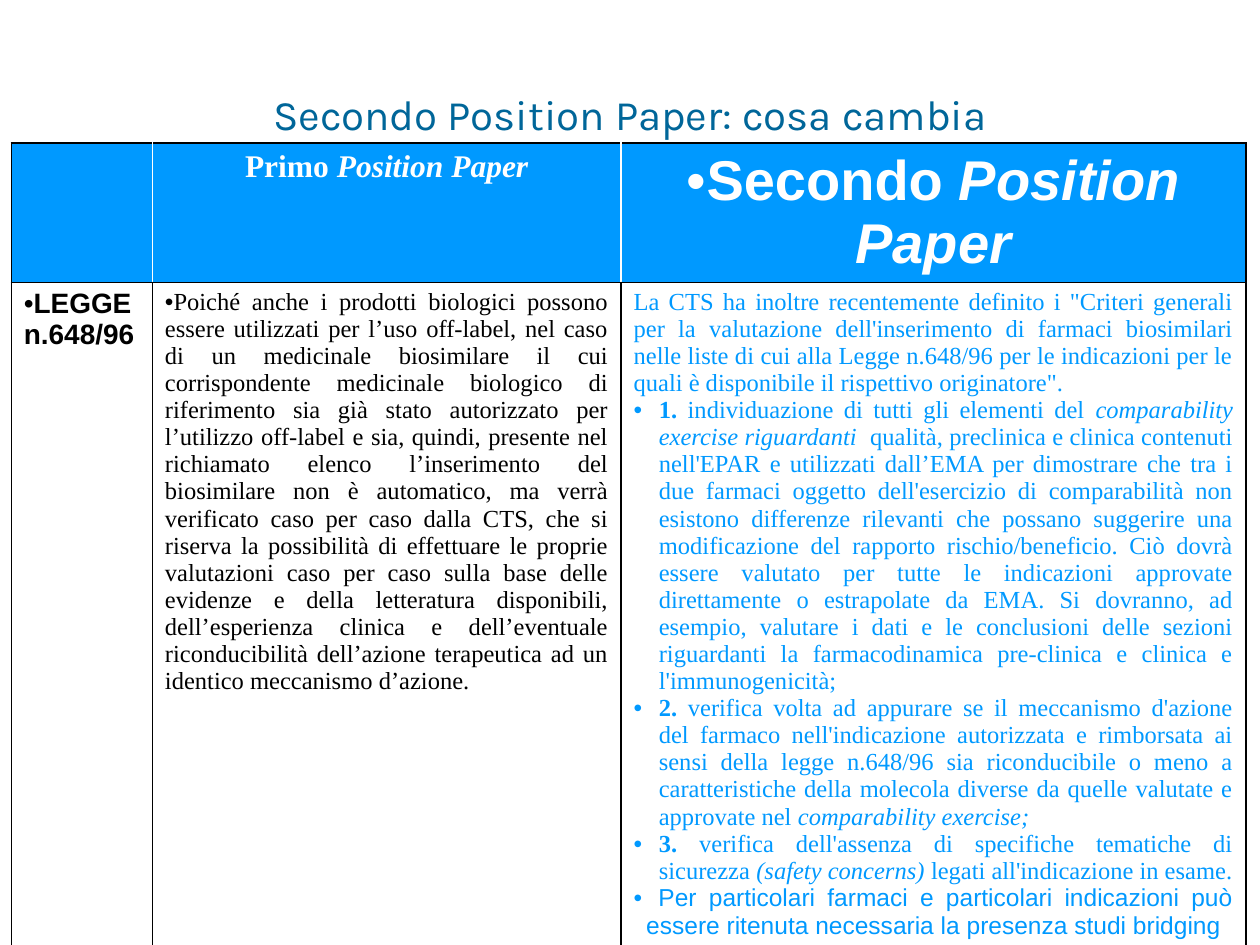
from dataclasses import dataclass

from lxml import etree
from pptx import Presentation
from pptx.dml.color import RGBColor
from pptx.enum.text import MSO_ANCHOR, PP_ALIGN
from pptx.oxml.ns import qn
from pptx.util import Pt

LEFT, CENTER, JUSTIFY = PP_ALIGN.LEFT, PP_ALIGN.CENTER, PP_ALIGN.JUSTIFY
TOP = MSO_ANCHOR.TOP


@dataclass(frozen=True)
class Theme:
    """Colours, fonts and type sizes of the slide."""
    blue: str = "0099FF"
    title_blue: str = "006699"
    black: str = "000000"
    white: str = "FFFFFF"
    title_font: str = "Karla"
    sans: str = "Arial"
    serif: str = "Times New Roman"
    title_size: float = 24
    first_head_size: float = 18
    second_head_size: float = 32
    label_size: float = 16
    body_size: float = 14
    border: float = 1


@dataclass(frozen=True)
class Style:
    """Look of one paragraph."""
    font: str
    size: float
    color: str
    align: int = LEFT
    bullet: bool = False
    indent: float = 0


THEME = Theme()
TITLE = Style(THEME.title_font, THEME.title_size, THEME.title_blue, CENTER)
FIRST_HEAD = Style(THEME.serif, THEME.first_head_size, THEME.white, CENTER)
SECOND_HEAD = Style(THEME.sans, THEME.second_head_size, THEME.white, CENTER, True)
LABEL = Style(THEME.sans, THEME.label_size, THEME.black, LEFT, True)
FIRST_BODY = Style(THEME.serif, THEME.body_size, THEME.black, JUSTIFY, True)
INTRO = Style(THEME.serif, THEME.body_size, THEME.blue, JUSTIFY)
CRITERION = Style(THEME.serif, THEME.body_size, THEME.blue, JUSTIFY, True, 14.4)
CLOSING = Style(THEME.sans, THEME.body_size, THEME.blue, JUSTIFY, True, 7.2)

HEADER = [
    [],
    [(FIRST_HEAD, [("Primo ", "b"), ("Position Paper", "bi")])],
    [(SECOND_HEAD, [("Secondo ", "b"), ("Position Paper", "bi")])],
]
BODY = [
    [(LABEL, [("LEGGE n.648/96", "b")])],
    [(FIRST_BODY, [(
        "Poiché anche i prodotti biologici possono essere utilizzati per l’uso off-label, "
        "nel caso di un medicinale biosimilare il cui corrispondente medicinale biologico "
        "di riferimento sia già stato autorizzato per l’utilizzo off-label e sia, quindi, "
        "presente nel richiamato elenco l’inserimento del biosimilare non è automatico, ma "
        "verrà verificato caso per caso dalla CTS, che si riserva la possibilità di "
        "effettuare le proprie valutazioni caso per caso sulla base delle evidenze e della "
        "letteratura disponibili, dell’esperienza clinica e dell’eventuale riconducibilità "
        "dell’azione terapeutica ad un identico meccanismo d’azione. ", "")])],
    [
        (INTRO, [(
            "La CTS ha inoltre recentemente definito i \"Criteri generali per la valutazione "
            "dell'inserimento di farmaci biosimilari nelle liste di cui alla Legge n.648/96 "
            "per le indicazioni per le quali è disponibile il rispettivo originatore\".", "")]),
        (CRITERION, [
            ("1. ", "b"),
            ("individuazione di tutti gli elementi del ", ""),
            ("comparability exercise riguardanti  ", "i"),
            ("qualità, preclinica e clinica contenuti nell'EPAR e utilizzati dall’EMA per "
             "dimostrare che tra i due farmaci oggetto dell'esercizio di comparabilità non "
             "esistono differenze rilevanti che possano suggerire una modificazione del "
             "rapporto rischio/beneficio. Ciò dovrà essere valutato per tutte le indicazioni "
             "approvate direttamente o estrapolate da EMA. Si dovranno, ad esempio, valutare "
             "i dati e le conclusioni delle sezioni riguardanti la farmacodinamica "
             "pre-clinica e clinica e l'immunogenicità;", "")]),
        (CRITERION, [
            ("2. ", "b"),
            ("verifica volta ad appurare se il meccanismo d'azione del farmaco "
             "nell'indicazione autorizzata e rimborsata ai sensi della legge n.648/96 sia "
             "riconducibile o meno a caratteristiche della molecola diverse da quelle "
             "valutate e approvate nel ", ""),
            ("comparability exercise;", "i")]),
        (CRITERION, [
            ("3. ", "b"),
            ("verifica dell'assenza di specifiche tematiche di sicurezza ", ""),
            ("(safety concerns) ", "i"),
            ("legati all'indicazione in esame.", "")]),
        (CLOSING, [(
            " Per particolari farmaci e particolari indicazioni può essere ritenuta "
            "necessaria la presenza studi bridging", "")]),
    ],
]


def write_paragraph(para, style, spans):
    """Format one paragraph and add its runs."""
    para.alignment = style.align
    para.space_before = Pt(0)
    properties = para._p.get_or_add_pPr()
    properties.set("marL", str(Pt(style.indent)))
    properties.set("indent", str(Pt(-style.indent)))
    if style.bullet:
        etree.SubElement(properties, qn("a:buFont"), typeface=THEME.sans)
        etree.SubElement(properties, qn("a:buChar"), char="•")
    else:
        etree.SubElement(properties, qn("a:buNone"))
    for text, marks in spans:
        span = para.add_run()
        span.text = text
        font = span.font
        font.name, font.size = style.font, Pt(style.size)
        font.bold, font.italic = "b" in marks, "i" in marks
        font.color.rgb = RGBColor.from_string(style.color)


def write_frame(frame, paragraphs):
    """Fill a text frame with styled paragraphs."""
    for index, (style, spans) in enumerate(paragraphs):
        para = frame.add_paragraph() if index else frame.paragraphs[0]
        write_paragraph(para, style, spans)


def set_borders(cell, colors):
    """Draw the left, right, top and bottom borders of a cell."""
    properties = cell._tc.get_or_add_tcPr()
    for index, (side, color) in enumerate(zip("LRTB", colors)):
        line = etree.Element(qn(f"a:ln{side}"), w=str(Pt(THEME.border)))
        fill = etree.SubElement(line, qn("a:solidFill"))
        etree.SubElement(fill, qn("a:srgbClr"), val=color)
        properties.insert(index, line)


def add_title(page, box):
    """Place the slide title in the given box."""
    title = page.shapes.title
    title.left, title.top, title.width, title.height = map(Pt, box)
    frame = title.text_frame
    frame.word_wrap = True
    frame.vertical_anchor = TOP
    write_frame(frame, [(TITLE, [("Secondo Position Paper: cosa cambia", "")])])


def add_comparison(page, box, widths, heights):
    """Place the table that compares the two papers."""
    rows = [HEADER, BODY]
    table = page.shapes.add_table(len(rows), len(widths), *map(Pt, box)).table
    table.first_row = table.horz_banding = False
    for column, width in zip(table.columns, widths):
        column.width = Pt(width)
    for row, height in zip(table.rows, heights):
        row.height = Pt(height)
    last = len(widths) - 1
    for r, contents in enumerate(rows):
        inner = THEME.black if r else THEME.white
        for c, paragraphs in enumerate(contents):
            cell = table.cell(r, c)
            cell.fill.solid()
            cell.fill.fore_color.rgb = RGBColor.from_string(THEME.white if r else THEME.blue)
            left = inner if c else THEME.black
            right = inner if c < last else THEME.black
            set_borders(cell, (left, right, THEME.black, THEME.black))
            write_frame(cell.text_frame, paragraphs)


def main():
    """Build the slide and save the deck."""
    deck = Presentation()
    deck.slide_width, deck.slide_height = Pt(720), Pt(540)
    page = deck.slides.add_slide(deck.slide_layouts[5])
    add_title(page, (0, 46.8, 720, 36))
    widths, heights = (80.6, 267.8, 357.1), (79.5, 361.5)
    add_comparison(page, (6.5, 81.8, sum(widths), sum(heights)), widths, heights)
    deck.save("out.pptx")


if __name__ == "__main__":
    main()
